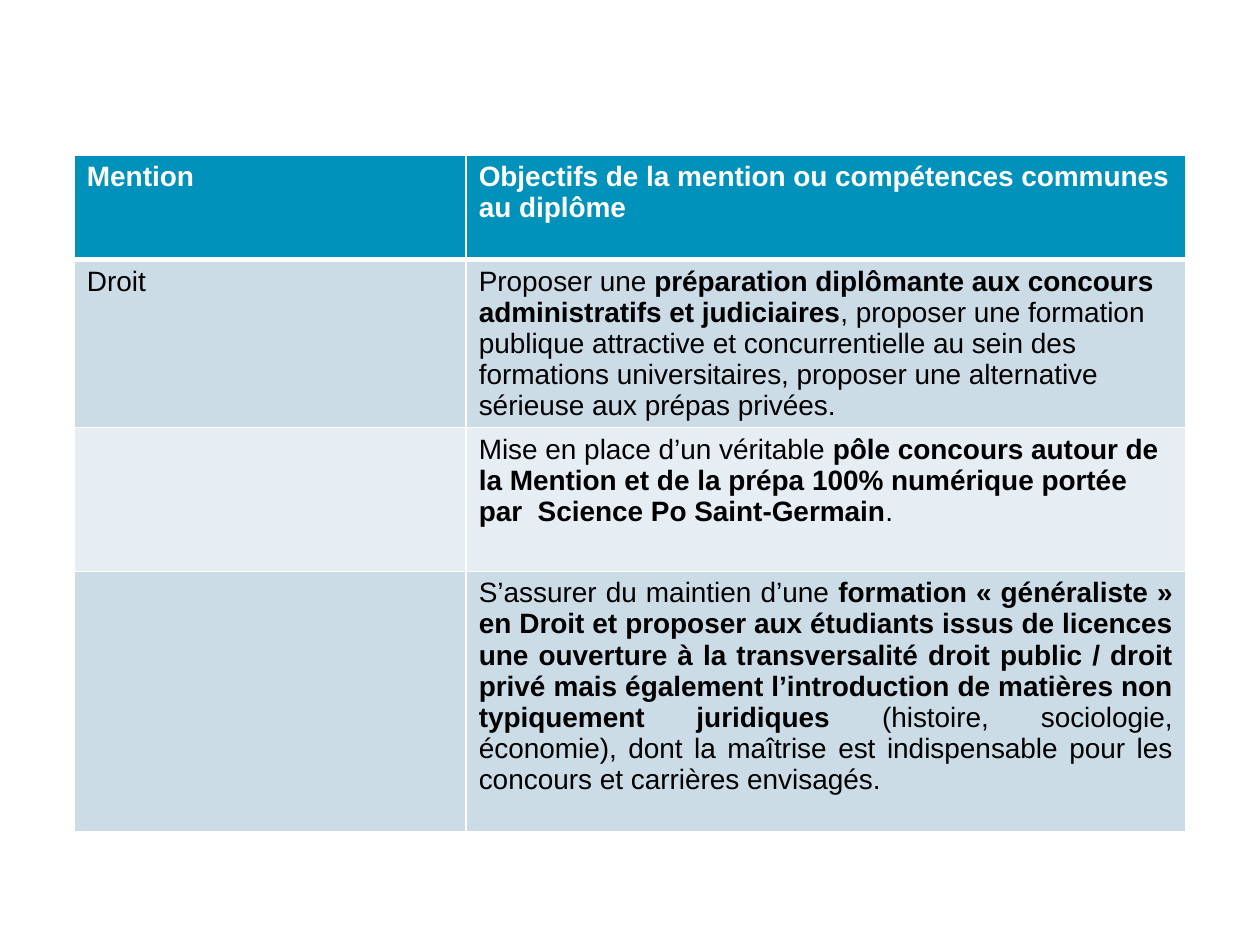
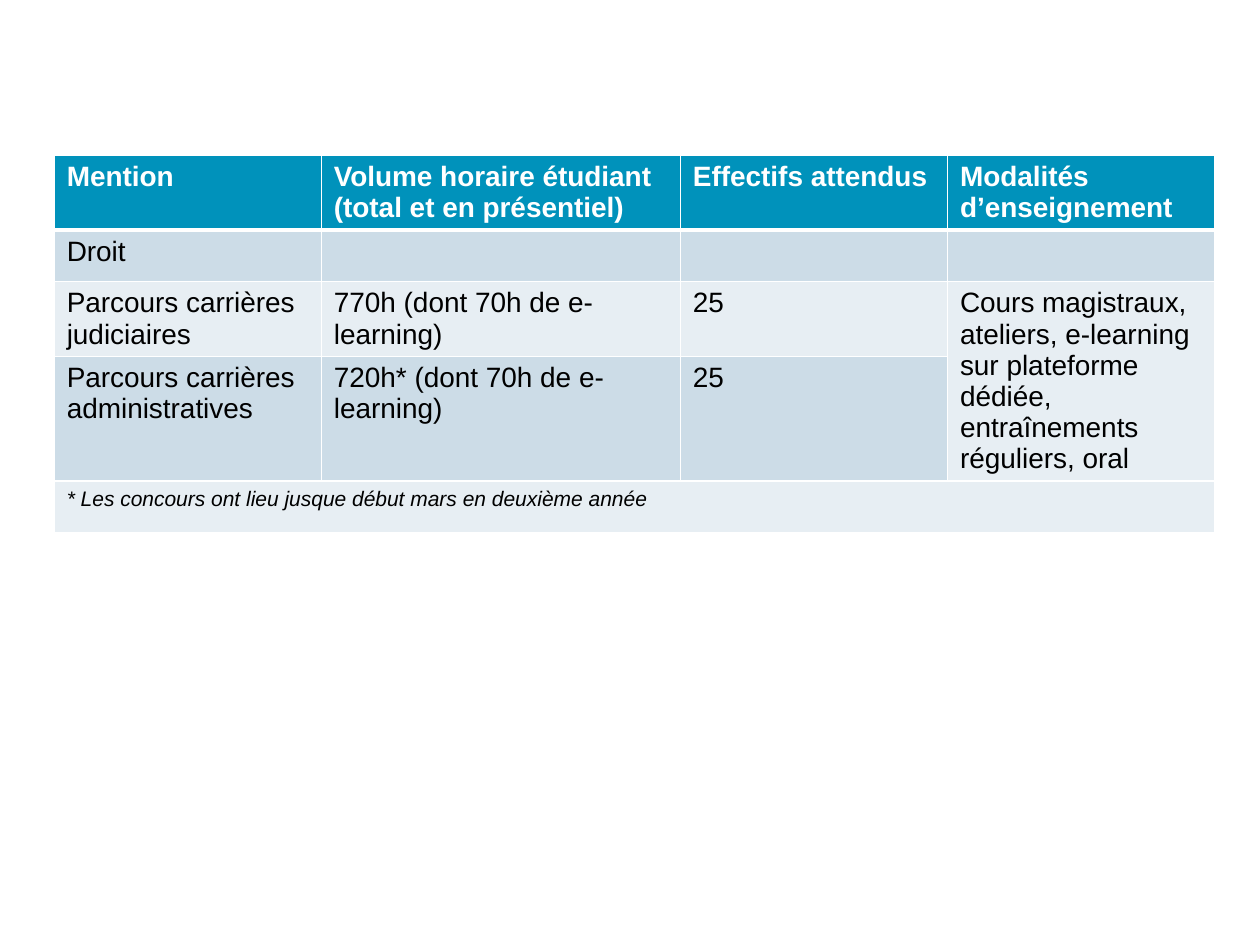
import pptx
import pptx.util
import pptx.dml.color
import pptx.enum.text
import lxml.etree
from dataclasses import dataclass

Inches = pptx.util.Inches
Pt = pptx.util.Pt
DRAWING = "{http://schemas.openxmlformats.org/drawingml/2006/main}"


@dataclass(frozen=True)
class Theme:
    font: str = "Arial"
    header_fill: str = "0092BB"
    band_fills: tuple = ("CCDCE7", "E7EEF3")
    header_text: str = "FFFFFF"
    body_text: str = "000000"
    border: str = "FFFFFF"
    body_size: int = 16
    note_size: int = 12
    thin_line: int = 1
    header_line: int = 3
    table_top: float = 1.23


theme = Theme()


def set_border(cell, side, width):
    """Add one border line; call before the cell is filled."""
    properties = cell._tc.get_or_add_tcPr()
    line = lxml.etree.SubElement(properties, f"{DRAWING}ln{side}", w=str(Pt(width)))
    fill = lxml.etree.SubElement(line, DRAWING + "solidFill")
    lxml.etree.SubElement(fill, DRAWING + "srgbClr", val=theme.border)


def write_cell(cell, text, is_header):
    """Write newline-separated paragraphs; **double stars** delimit bold runs."""
    is_note = text.startswith("* ")
    color = theme.header_text if is_header else theme.body_text
    for index, line in enumerate(text.split("\n")):
        frame = cell.text_frame
        paragraph = frame.paragraphs[0] if index == 0 else frame.add_paragraph()
        for part_index, part in enumerate(line.split("**")):
            run = paragraph.add_run()
            run.text = part
            run.font.name = theme.font
            run.font.size = Pt(theme.note_size if is_note else theme.body_size)
            run.font.bold = is_header or part_index % 2 == 1
            run.font.italic = is_note
            run.font.color.rgb = pptx.dml.color.RGBColor.from_string(color)


objectives = {
    "left": 0.59,
    "columns": [3.11, 5.71],
    "rows": [0.83, 1.33, 1.14, 2.07],
    "merges": [],
    "justified": [(3, 1)],
    "texts": [
        ["Mention", "Objectifs de la mention ou compétences communes au diplôme"],
        ["Droit",
         "Proposer une **préparation diplômante aux concours administratifs et "
         "judiciaires**, proposer une formation publique attractive et "
         "concurrentielle au sein des formations universitaires, proposer une "
         "alternative sérieuse aux prépas privées."],
        ["",
         "Mise en place d’un véritable **pôle concours autour de la Mention et de "
         "la prépa 100% numérique portée par  Science Po Saint-Germain**."],
        ["",
         "S’assurer du maintien d’une **formation « généraliste » en Droit et "
         "proposer aux étudiants issus de licences une ouverture à la "
         "transversalité droit public / droit privé mais également "
         "l’introduction de matières non typiquement juridiques** (histoire, "
         "sociologie, économie), dont la maîtrise est indispensable pour les "
         "concours et carrières envisagés."],
    ],
}

teaching = {
    "left": 0.43,
    "columns": [2.12, 2.85, 2.12, 2.12],
    "rows": [0.59, 0.41, 0.59, 0.99, 0.41],
    "merges": [((2, 3), (3, 3)), ((4, 0), (4, 3))],
    "justified": [],
    "texts": [
        ["Mention", "Volume horaire étudiant\n(total et en présentiel)",
         "Effectifs attendus", "Modalités d’enseignement"],
        ["Droit", "", "", ""],
        ["Parcours carrières judiciaires", "770h (dont 70h de e-learning)", "25",
         "Cours magistraux, ateliers, e-learning sur plateforme dédiée, "
         "entraînements réguliers, oral"],
        ["Parcours carrières administratives", "720h* (dont 70h de e-learning)",
         "25", ""],
        ["* Les concours ont lieu jusque début mars en deuxième année", "", "", ""],
    ],
}

presentation = pptx.Presentation()
presentation.slide_width = Inches(10)
presentation.slide_height = Inches(7.5)
blank_layout = presentation.slide_layouts[6]

for content in (objectives, teaching):
    slide = presentation.slides.add_slide(blank_layout)
    columns, rows = content["columns"], content["rows"]
    table = slide.shapes.add_table(
        len(rows), len(columns), Inches(content["left"]), Inches(theme.table_top),
        Inches(sum(columns)), Inches(sum(rows))).table
    for column, width in zip(table.columns, columns):
        column.width = Inches(width)
    for row, height in zip(table.rows, rows):
        row.height = Inches(height)
    for first, last in content["merges"]:
        table.cell(*first).merge(table.cell(*last))

    for row_index, texts in enumerate(content["texts"]):
        is_header = row_index == 0
        fill = theme.header_fill if is_header else theme.band_fills[(row_index - 1) % 2]
        line_widths = {
            "L": theme.thin_line,
            "R": theme.thin_line,
            "T": theme.header_line if row_index == 1 else theme.thin_line,
            "B": theme.header_line if is_header else theme.thin_line,
        }
        for column_index, text in enumerate(texts):
            cell = table.cell(row_index, column_index)
            for side, width in line_widths.items():
                set_border(cell, side, width)
            cell.fill.solid()
            cell.fill.fore_color.rgb = pptx.dml.color.RGBColor.from_string(fill)
            if text:
                write_cell(cell, text, is_header)

    for position in content["justified"]:
        paragraph = table.cell(*position).text_frame.paragraphs[0]
        paragraph.alignment = pptx.enum.text.PP_ALIGN.JUSTIFY

presentation.save("out.pptx")
